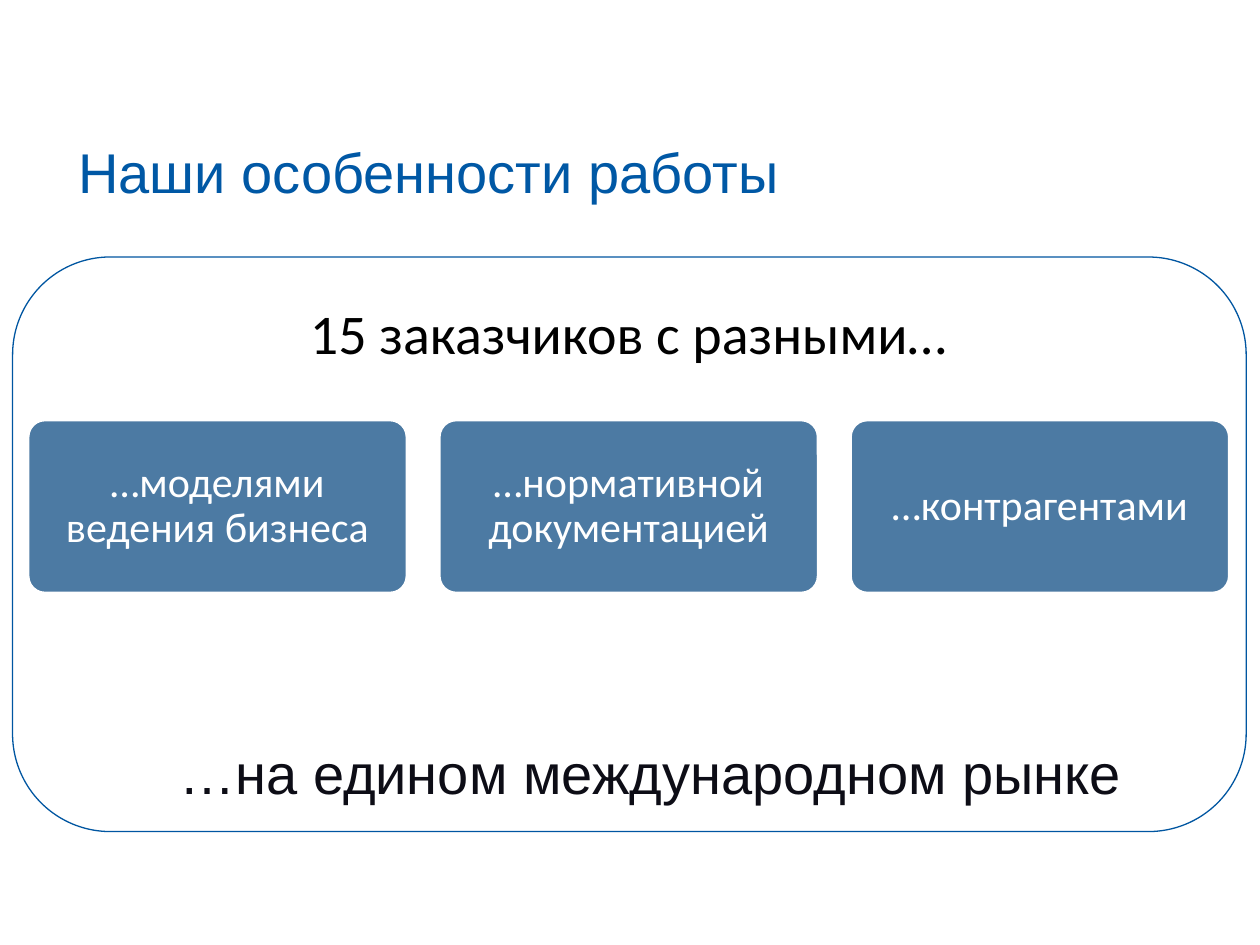
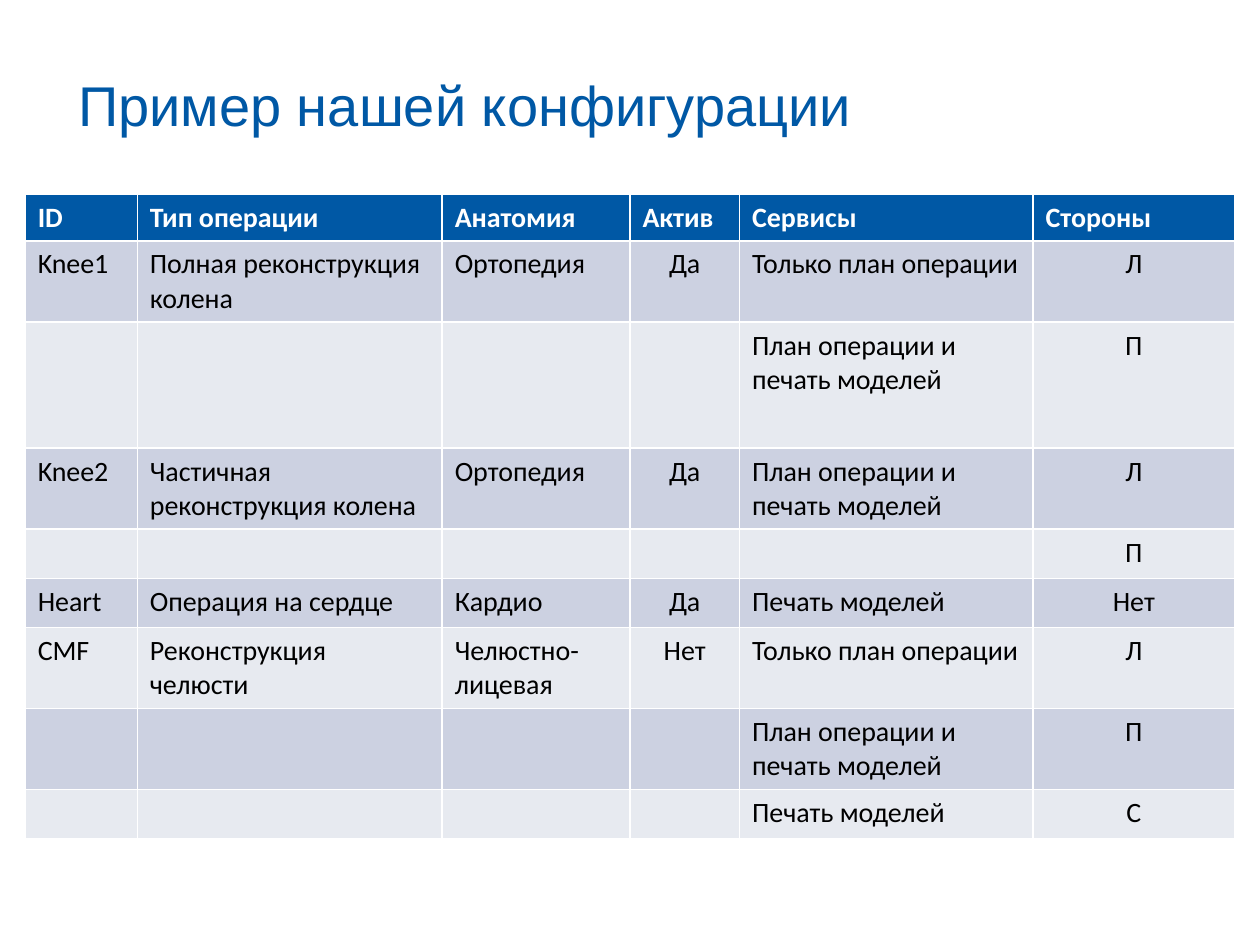
from lxml import etree
from pptx import Presentation
from pptx.dml.color import RGBColor
from pptx.enum import shapes, text
from pptx.oxml import ns
from pptx.util import Inches, Pt

TITLE_BLUE = RGBColor(0x00, 0x58, 0xA5)
FRAME_BLUE = RGBColor(0x00, 0x56, 0xA1)
CARD_BLUE = RGBColor(0x00, 0x42, 0x7C)
INK = RGBColor(0x0D, 0x0D, 0x16)
BLACK = RGBColor(0x00, 0x00, 0x00)
WHITE = RGBColor(0xFF, 0xFF, 0xFF)
ROW_FILLS = (RGBColor(0xCC, 0xD1, 0xE1), RGBColor(0xE7, 0xEA, 0xF0))
HEADING_FONT, BODY_FONT = "Arial", "Calibri"
CENTER, LEFT = text.PP_ALIGN.CENTER, text.PP_ALIGN.LEFT

FEATURES = ("…моделями ведения бизнеса", "…нормативной документацией", "…контрагентами")
COLUMN_WIDTHS = (0.89, 2.42, 1.49, 0.87, 2.33, 1.6)
CENTERED_COLUMNS = (3, 5)
ONE_LINE, TWO_LINES = 0.39, 0.64
ROW_HEIGHTS = (0.37, TWO_LINES, 1, TWO_LINES, ONE_LINE, ONE_LINE, TWO_LINES, TWO_LINES, ONE_LINE)
CONFIGURATION = (
    ("ID", "Тип операции", "Анатомия", "Актив", "Сервисы", "Стороны"),
    ("Knee1", "Полная реконструкция колена", "Ортопедия", "Да", "Только план операции", "Л"),
    ("", "", "", "", "План операции и печать моделей", "П"),
    ("Knee2", "Частичная реконструкция колена", "Ортопедия", "Да",
     "План операции и печать моделей", "Л"),
    ("", "", "", "", "", "П"),
    ("Heart", "Операция на сердце", "Кардио", "Да", "Печать моделей", "Нет"),
    ("CMF", "Реконструкция челюсти", "Челюстно-лицевая", "Нет", "Только план операции", "Л"),
    ("", "", "", "", "План операции и печать моделей", "П"),
    ("", "", "", "", "Печать моделей", "С"),
)


def write(frame, words, size, font, color, align=CENTER, spacing=None, bold=False):
    """Put one formatted run in the first paragraph of a text frame."""
    para = frame.paragraphs[0]
    para.alignment = align
    if spacing:
        para.line_spacing = spacing
    span = para.add_run()
    span.text = words
    span.font.size, span.font.name, span.font.bold = Pt(size), font, bold
    span.font.color.rgb = color


def set_up_frame(frame, anchor, inset):
    """Set wrapping, anchor and equal insets of a text frame."""
    frame.word_wrap = True
    frame.auto_size = text.MSO_AUTO_SIZE.NONE
    frame.vertical_anchor = anchor
    frame.margin_left = frame.margin_right = Inches(inset)
    frame.margin_top = frame.margin_bottom = Inches(inset)


def add_page(deck, heading, bottom_inset=0.05):
    """Add a title-only slide with the shared heading style."""
    page = deck.slides.add_slide(deck.slide_layouts[5])
    title = page.shapes.title
    title.left, title.top = Inches(0.52), Inches(0.43)
    title.width, title.height = Inches(6.67), Inches(1.25)
    set_up_frame(title.text_frame, text.MSO_ANCHOR.BOTTOM, 0.1)
    title.text_frame.margin_bottom = Inches(bottom_inset)
    write(title.text_frame, heading, 32, HEADING_FONT, TITLE_BLUE, LEFT, 0.9)
    return page


def add_label(page, box, words, font, color, anchor, inset, spacing=None):
    """Add a centred large caption in the given box."""
    frame = page.shapes.add_textbox(*map(Inches, box)).text_frame
    set_up_frame(frame, anchor, inset)
    write(frame, words, 32, font, color, spacing=spacing)


def add_rounded(page, box, line_color, line_width, roundness):
    """Add an unfilled rounded rectangle with an outline."""
    shape = page.shapes.add_shape(shapes.MSO_SHAPE.ROUNDED_RECTANGLE, *map(Inches, box))
    shape.shadow.inherit = False
    shape.adjustments[0] = roundness
    shape.fill.background()
    shape.line.color.rgb = line_color
    shape.line.width = Pt(line_width)
    return shape


def add_cards(page, box, labels, gap=0.25):
    """Spread translucent cards evenly across the box."""
    left, top, width, height = box
    card_width = (width - gap * (len(labels) - 1)) / len(labels)
    for index, label in enumerate(labels):
        place = (left + index * (card_width + gap), top, card_width, height)
        card = add_rounded(page, place, WHITE, 2, 0.1)
        card.fill.solid()
        card.fill.fore_color.rgb = CARD_BLUE
        color = next(card.element.spPr.iter(ns.qn("a:srgbClr")))
        etree.SubElement(color, ns.qn("a:alpha"), val="70000")
        set_up_frame(card.text_frame, text.MSO_ANCHOR.MIDDLE, 0.12)
        write(card.text_frame, label, 24, BODY_FONT, WHITE, spacing=0.9)


def add_configuration(page, box):
    """Add the banded configuration table."""
    table = page.shapes.add_table(
        len(CONFIGURATION), len(COLUMN_WIDTHS), *map(Inches, box)).table
    for column, width in zip(table.columns, COLUMN_WIDTHS):
        column.width = Inches(width)
    for number, (row, height, values) in enumerate(zip(table.rows, ROW_HEIGHTS, CONFIGURATION)):
        row.height = Inches(height)
        header = number == 0
        for position, (cell, value) in enumerate(zip(row.cells, values)):
            cell.fill.solid()
            cell.fill.fore_color.rgb = TITLE_BLUE if header else ROW_FILLS[(number - 1) % 2]
            if value:
                centered = position in CENTERED_COLUMNS and not header
                write(cell.text_frame, value, 16, BODY_FONT, WHITE if header else BLACK,
                      CENTER if centered else LEFT, bold=header)
            else:
                para = cell.text_frame.paragraphs[0]
                etree.SubElement(para._p, ns.qn("a:endParaRPr"), sz="1600")


def build_features(deck):
    """Build the slide on the ways of working."""
    page = add_page(deck, "Наши особенности работы")
    add_label(page, (0.26, 1.74, 9.46, 1.3), "15 заказчиков с разными…",
              BODY_FONT, BLACK, text.MSO_ANCHOR.BOTTOM, 0.13, 0.9)
    add_cards(page, (0.22, 3.33, 9.54, 1.38), FEATURES)
    add_label(page, (1.26, 5.81, 7.81, 0.64), "…на едином международном рынке",
              HEADING_FONT, INK, text.MSO_ANCHOR.TOP, 0.05)
    add_rounded(page, (0.1, 2.04, 9.79, 4.56), FRAME_BLUE, 0.75, 0.17)


def build_example(deck):
    """Build the slide with the configuration example."""
    page = add_page(deck, "Пример нашей конфигурации", 0.58)
    add_configuration(page, (0.2, 1.54, 9.6, 5.07))


def main():
    """Build and save the deck."""
    deck = Presentation()
    deck.slide_width, deck.slide_height = Inches(10), Inches(7.5)
    build_features(deck)
    build_example(deck)
    deck.save("out.pptx")


if __name__ == "__main__":
    main()
